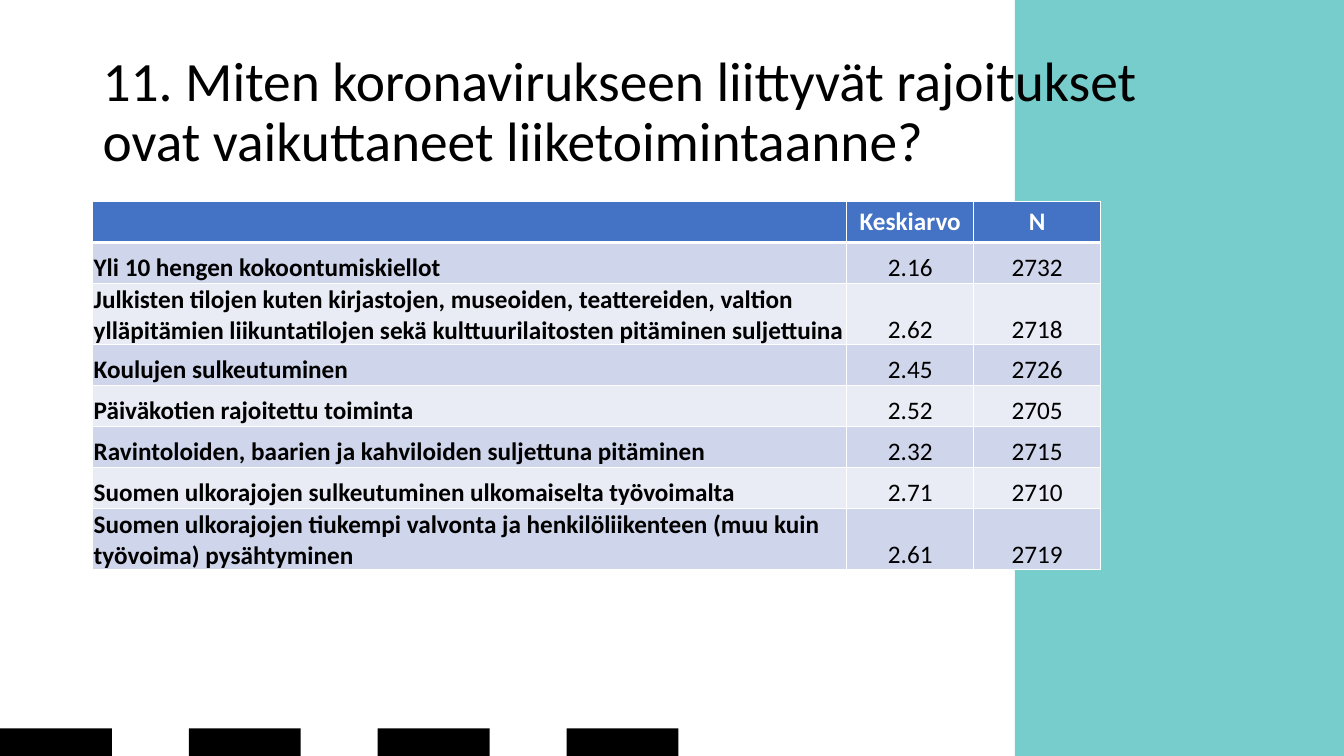
from typing import NamedTuple

from lxml.etree import SubElement
from pptx import Presentation
from pptx.dml.color import RGBColor
from pptx.enum.shapes import MSO_SHAPE as Preset
from pptx.enum.text import MSO_ANCHOR as Anchor, PP_ALIGN as Align
from pptx.oxml.ns import qn
from pptx.util import Pt

BLACK = RGBColor(0x00, 0x00, 0x00)
WHITE = RGBColor(0xFF, 0xFF, 0xFF)
TEAL = RGBColor(0x77, 0xCD, 0xCB)
HEADER_BLUE = RGBColor(0x44, 0x72, 0xC4)
BANDS = (RGBColor(0xCF, 0xD5, 0xEA), RGBColor(0xE9, 0xEB, 0xF5))

FONT = "Calibri"
TITLE = "11. Miten koronavirukseen liittyvät rajoitukset ovat vaikuttaneet liiketoimintaanne?"
HEADINGS = ("", "Keskiarvo", "N")
COLUMN_WIDTHS = (538.6, 90.7, 90.7)
ROW_HEIGHT = 29.2
TABLE_LEFT, TABLE_TOP = 66.24, 144
BAR_COUNT, BAR_PITCH = 4, 134.9
THIN, THICK = 1, 3
BODY_MARGINS = {"margin_left": Pt(0.7), "margin_top": Pt(0.7),
                "margin_right": Pt(0.7), "margin_bottom": Pt(0)}


class Block(NamedTuple):
    left: float
    top: float
    width: float
    height: float
    color: RGBColor


class Restriction(NamedTuple):
    name: str
    mean: str
    count: str


RESTRICTIONS = (
    Restriction("Yli 10 hengen kokoontumiskiellot", "2.16", "2732"),
    Restriction("Julkisten tilojen kuten kirjastojen, museoiden, teattereiden, valtion "
                "ylläpitämien liikuntatilojen sekä kulttuurilaitosten pitäminen suljettuina",
                "2.62", "2718"),
    Restriction("Koulujen sulkeutuminen", "2.45", "2726"),
    Restriction("Päiväkotien rajoitettu toiminta", "2.52", "2705"),
    Restriction("Ravintoloiden, baarien ja kahviloiden suljettuna pitäminen", "2.32", "2715"),
    Restriction("Suomen ulkorajojen sulkeutuminen ulkomaiselta työvoimalta", "2.71", "2710"),
    Restriction("Suomen ulkorajojen tiukempi valvonta ja henkilöliikenteen (muu kuin "
                "työvoima) pysähtyminen", "2.61", "2719"),
)


def apply_format(target, values: dict) -> None:
    for attribute, value in values.items():
        setattr(target, attribute, value)


def write_text(paragraph, text: str, size: float, color: RGBColor, bold: bool) -> None:
    paragraph.text = text
    apply_format(paragraph.font, {"name": FONT, "size": Pt(size), "bold": bold})
    paragraph.font.color.rgb = color


def draw_block(slide, block: Block) -> None:
    rectangle = slide.shapes.add_shape(
        Preset.RECTANGLE, Pt(block.left), Pt(block.top), Pt(block.width), Pt(block.height))
    rectangle.shadow.inherit = False
    rectangle.fill.solid()
    rectangle.fill.fore_color.rgb = block.color
    rectangle.line.fill.background()


def draw_title(slide) -> None:
    frame = slide.shapes.add_textbox(Pt(66.24), Pt(28.8), Pt(828), Pt(104.4)).text_frame
    apply_format(frame, {"word_wrap": True, "vertical_anchor": Anchor.MIDDLE})
    heading = frame.paragraphs[0]
    write_text(heading, TITLE, 39.6, BLACK, False)
    heading.line_spacing = 0.9


def set_borders(cell, top: float, bottom: float) -> None:
    properties = cell._tc.get_or_add_tcPr()
    widths = {"a:lnL": THIN, "a:lnR": THIN, "a:lnT": top, "a:lnB": bottom}
    for tag, width in widths.items():
        border = SubElement(properties, qn(tag), w=str(Pt(width)))
        fill = SubElement(border, qn("a:solidFill"))
        SubElement(fill, qn("a:srgbClr"), val=str(WHITE))


def fill_cell(cell, text: str, row: int, column: int) -> None:
    is_header = row == 0
    set_borders(cell, THICK if row == 1 else THIN, THICK if is_header else THIN)
    cell.fill.solid()
    cell.fill.fore_color.rgb = HEADER_BLUE if is_header else BANDS[(row - 1) % 2]
    if not is_header:
        apply_format(cell, {"vertical_anchor": Anchor.BOTTOM, **BODY_MARGINS})
    paragraph = cell.text_frame.paragraphs[0]
    write_text(paragraph, text, 18, WHITE if is_header else BLACK, is_header or column == 0)
    paragraph.alignment = Align.LEFT if column == 0 else Align.CENTER


def draw_results(slide) -> None:
    rows = (HEADINGS, *RESTRICTIONS)
    results = slide.shapes.add_table(
        len(rows), len(HEADINGS), Pt(TABLE_LEFT), Pt(TABLE_TOP),
        Pt(sum(COLUMN_WIDTHS)), Pt(ROW_HEIGHT * len(rows))).table
    for column, width in zip(results.columns, COLUMN_WIDTHS):
        column.width = Pt(width)
    for row_index, texts in enumerate(rows):
        results.rows[row_index].height = Pt(ROW_HEIGHT)
        for column_index, text in enumerate(texts):
            fill_cell(results.cell(row_index, column_index), text, row_index, column_index)


def main() -> None:
    deck = Presentation()
    apply_format(deck, {"slide_width": Pt(960), "slide_height": Pt(540)})
    slide = deck.slides.add_slide(deck.slide_layouts[6])
    side_panel = Block(725, 0, 235, 540, TEAL)
    bars = [Block(i * BAR_PITCH, 520.3, 79.9, 19.7, BLACK) for i in range(BAR_COUNT)]
    for block in (side_panel, *bars):
        draw_block(slide, block)
    draw_title(slide)
    draw_results(slide)
    deck.save("out.pptx")


if __name__ == "__main__":
    main()
